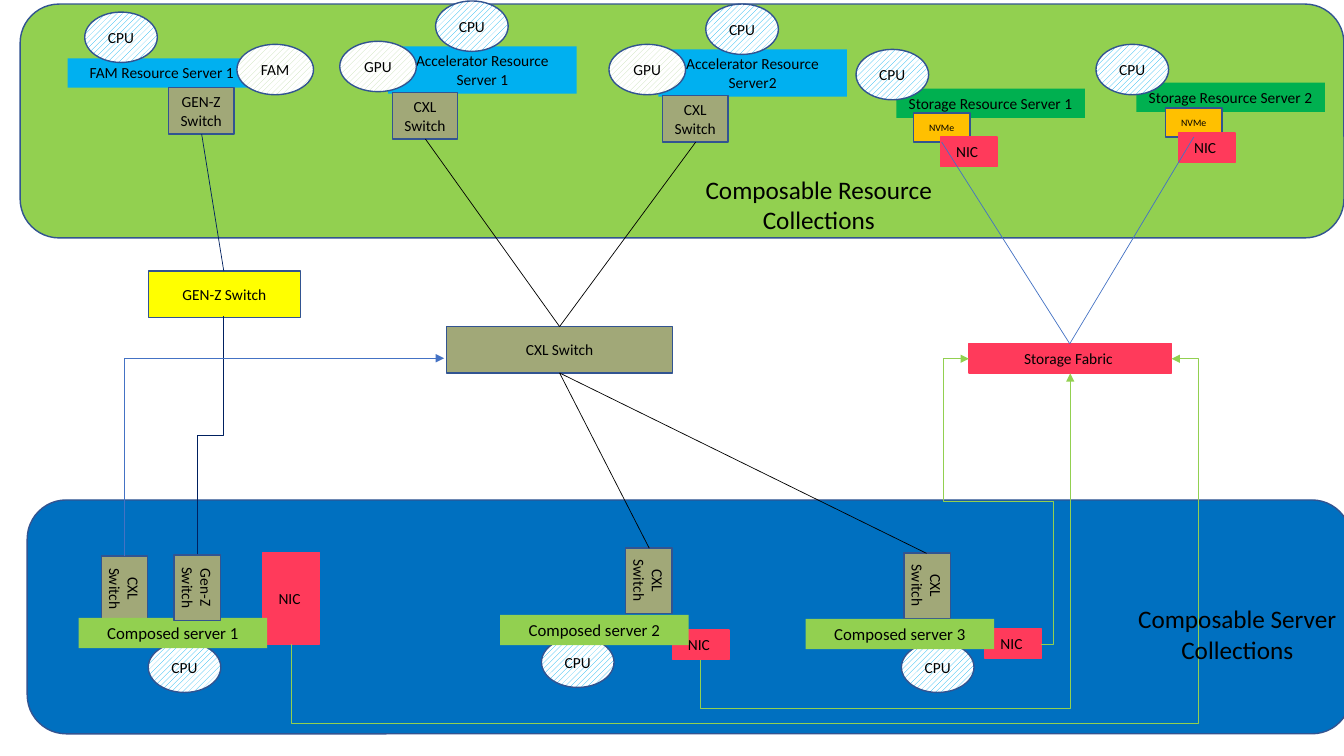
from lxml import etree
from pptx import Presentation
from pptx.dml.color import RGBColor
from pptx.enum.dml import MSO_PATTERN
from pptx.enum.shapes import MSO_CONNECTOR, MSO_SHAPE
from pptx.enum.text import MSO_ANCHOR, MSO_AUTO_SIZE, PP_ALIGN
from pptx.oxml.ns import qn
from pptx.util import Inches, Pt

RECT, OVAL, ROUND = MSO_SHAPE.RECTANGLE, MSO_SHAPE.OVAL, MSO_SHAPE.ROUNDED_RECTANGLE
STRAIGHT, ELBOW = MSO_CONNECTOR.STRAIGHT, MSO_CONNECTOR.ELBOW
HATCH = MSO_PATTERN.WIDE_UPWARD_DIAGONAL
TOP, MIDDLE = MSO_ANCHOR.TOP, MSO_ANCHOR.MIDDLE
GROW = MSO_AUTO_SIZE.SHAPE_TO_FIT_TEXT
LEFT, CENTER = PP_ALIGN.LEFT, PP_ALIGN.CENTER

BLACK = RGBColor(0, 0, 0)
WHITE = RGBColor(0xFF, 0xFF, 0xFF)
EDGE = RGBColor(0x32, 0x54, 0x91)
BLUE = RGBColor(0x00, 0x70, 0xC0)
SKY = RGBColor(0x00, 0xB0, 0xF0)
LIME = RGBColor(0x92, 0xD0, 0x50)
GREEN = RGBColor(0x00, 0xB0, 0x50)
MINT = RGBColor(0xC5, 0xE0, 0xB4)
OLIVE = RGBColor(0xA1, 0xA8, 0x78)
ORANGE = RGBColor(0xFF, 0xC0, 0x00)
RED = RGBColor(0xFF, 0x3A, 0x5B)
YELLOW = RGBColor(0xFF, 0xFF, 0x00)
NAVY = RGBColor(0x00, 0x20, 0x60)
ROYAL = RGBColor(0x44, 0x72, 0xC4)

prs = Presentation()
prs.slide_width, prs.slide_height = Inches(13.33), Inches(7.5)
slide = prs.slides.add_slide(prs.slide_layouts[6])
shapes = slide.shapes


def add_run(para, text, size):
    run = para.add_run()
    run.text = text
    run.font.name = "Calibri"
    run.font.size = Pt(size)
    run.font.color.rgb = BLACK


def add_line(kind, ends, color):
    line = shapes.add_connector(kind, *[Inches(v) for v in ends])
    line.line.color.rgb = color
    line.line.width = Pt(0.5)
    etree.SubElement(line._element.spPr, qn("a:effectLst"))
    return line


# Kinds of box: shape, width, height, fill, line, text size, turn
KINDS = {
    "server": (ROUND, 13.13, 2.32, BLUE, EDGE, 11, 0),
    "resource": (ROUND, 13.13, 2.32, LIME, EDGE, 11, 0),
    "fam": (RECT, 1.87, 0.29, SKY, None, 11, 0),
    "accel": (RECT, 1.87, 0.47, SKY, None, 11, 0),
    "store": (RECT, 1.87, 0.29, GREEN, None, 11, 0),
    "composed": (RECT, 1.87, 0.3, LIME, None, 12, 0),
    "cpu": (OVAL, 0.72, 0.5, SKY, EDGE, 11, 0),
    "unit": (OVAL, 0.76, 0.5, MINT, EDGE, 11, 0),
    "switch": (RECT, 0.65, 0.46, OLIVE, EDGE, 11, 0),
    "turned": (RECT, 0.65, 0.46, OLIVE, EDGE, 11, 90),
    "nvme": (RECT, 0.56, 0.29, ORANGE, EDGE, 7, 0),
    "nic": (RECT, 0.56, 0.29, RED, RED, 11, 0),
    "tall": (RECT, 0.56, 0.91, RED, RED, 11, 0),
    "genz": (RECT, 1.51, 0.46, YELLOW, EDGE, 11, 0),
    "cxl": (RECT, 2.24, 0.46, OLIVE, EDGE, 11, 0),
    "fabric": (RECT, 2.01, 0.29, RED, RED, 11, 0),
}

# Boxes from back to front: kind, text, left, top
BOXES = [
    ("server", "", 0.27, 4.96),
    ("resource", "", 0.2, 0.04),
    ("fam", "FAM Resource Server 1", 0.67, 0.58),
    ("accel", "Accelerator Resource Server 1", 3.85, 0.46),
    ("accel", "Accelerator Resource Server2", 6.53, 0.49),
    ("store", "Storage Resource Server 1", 8.89, 0.88),
    ("store", "Storage Resource Server 2", 11.27, 0.82),
    ("cpu", "CPU", 0.84, 0.12),
    ("cpu", "CPU", 4.32, 0.01),
    ("cpu", "CPU", 7, 0.04),
    ("cpu", "CPU", 8.49, 0.49),
    ("cpu", "CPU", 10.87, 0.44),
    ("cpu", "CPU", 1.47, 6.37),
    ("cpu", "CPU", 5.37, 6.32),
    ("cpu", "CPU", 8.94, 6.37),
    ("unit", "FAM", 2.35, 0.44),
    ("unit", "GPU", 3.37, 0.41),
    ("unit", "GPU", 6.04, 0.44),
    ("switch", "GEN-Z Switch", 1.67, 0.87),
    ("switch", "CXL Switch", 3.89, 0.92),
    ("switch", "CXL Switch", 6.57, 0.95),
    ("turned", "CXL Switch", 0.91, 5.61),
    ("turned", "CXL Switch", 6.11, 5.53),
    ("turned", "CXL Switch", 8.87, 5.58),
    ("nvme", "NVMe", 9.06, 1.12),
    ("nvme", "NVMe", 11.56, 1.07),
    ("nic", "NIC ", 9.33, 1.36),
    ("nic", "NIC ", 11.69, 1.32),
    ("nic", "NIC ", 6.67, 6.25),
    ("nic", "NIC ", 9.77, 6.24),
    ("tall", "NIC ", 2.61, 5.48),
    ("composed", "Composed server 1", 0.78, 6.13),
    ("composed", "Composed server 2", 4.96, 6.1),
    ("composed", "Composed server 3", 7.99, 6.14),
    ("turned", "Gen-Z Switch", 1.63, 5.6),
    ("genz", "GEN-Z Switch", 1.47, 2.69),
    ("cxl", "CXL Switch", 4.43, 3.24),
    ("fabric", "Storage Fabric ", 9.61, 3.41),
]
for kind, text, x, y in BOXES:
    form, w, h, fill, edge, size, turn = KINDS[kind]
    box = shapes.add_shape(form, Inches(x), Inches(y), Inches(w), Inches(h))
    box.shadow.inherit = False
    box.rotation = turn
    if form == OVAL:
        box.fill.patterned()
        box.fill.pattern = HATCH
        box.fill.fore_color.rgb = fill
        box.fill.back_color.rgb = WHITE
    else:
        box.fill.solid()
        box.fill.fore_color.rgb = fill
    if edge is None:
        box.line.fill.background()
    else:
        box.line.color.rgb = edge
        box.line.width = Pt(1)
    if text:
        frame = box.text_frame
        frame.word_wrap = True
        frame.vertical_anchor = MIDDLE if edge else TOP
        if edge is None:
            frame.auto_size = GROW
        frame.paragraphs[0].alignment = CENTER
        add_run(frame.paragraphs[0], text, size)

# Straight links
LINKS = [
    (2, 1.33, 2.22, 2.69, NAVY),
    (4.22, 1.38, 5.55, 3.24, BLACK),
    (6.9, 1.41, 5.55, 3.24, BLACK),
    (9.34, 1.41, 10.61, 3.41, ROYAL),
    (11.84, 1.36, 10.61, 3.41, ROYAL),
    (6.44, 5.44, 5.55, 3.7, BLACK),
    (9.19, 5.49, 5.55, 3.7, BLACK),
]
for *ends, color in LINKS:
    add_line(STRAIGHT, ends, color)

# Bent links: frame before turning, turn, bends, bend places, colour, arrow
BENT = [
    (0.91, 4.19, 2.36, 0.26, 90, 3, [], NAVY, False),
    (5.84, 0.61, 2.83, 8.73, 90, 4, [-0.28, 1.03], LIME, True),
    (7.36, 3.29, 2.84, 3.67, 90, 3, [-0.17], LIME, True),
    (9.61, 3.56, 0.72, 2.83, 0, 5, [-0.17, 0.5, 1.35], LIME, True),
    (1.84, 2.95, 1.96, 3.17, 90, 2, [], ROYAL, True),
]
for x, y, w, h, turn, bends, places, color, arrow in BENT:
    link = add_line(ELBOW, (x + w, y + h, x, y), color)
    props = link._element.spPr
    props.find(qn("a:xfrm")).set("rot", str(turn * 60000))
    geom = props.find(qn("a:prstGeom"))
    geom.set("prst", f"bentConnector{bends}")
    guides = geom.find(qn("a:avLst"))
    for n, place in enumerate(places, 1):
        etree.SubElement(guides, qn("a:gd"), name=f"adj{n}" if bends > 3 else "adj1",
                         fmla=f"val {round(place * 100000)}")
    if arrow:
        etree.SubElement(props.find(qn("a:ln")), qn("a:tailEnd"), type="triangle")

# Names of the two collections
for name, x, y, w in [("Composable Resource", 6.9, 1.68, 2.47),
                      ("Composable Server", 11.19, 5.94, 2.19)]:
    label = shapes.add_textbox(Inches(x), Inches(y), Inches(w), Inches(0.71))
    frame = label.text_frame
    frame.word_wrap = False
    frame.auto_size = GROW
    frame.paragraphs[0].alignment = LEFT
    add_run(frame.paragraphs[0], name, 18)
    para = frame.add_paragraph()
    para.alignment = CENTER
    add_run(para, "Collections", 18)

prs.save("out.pptx")
